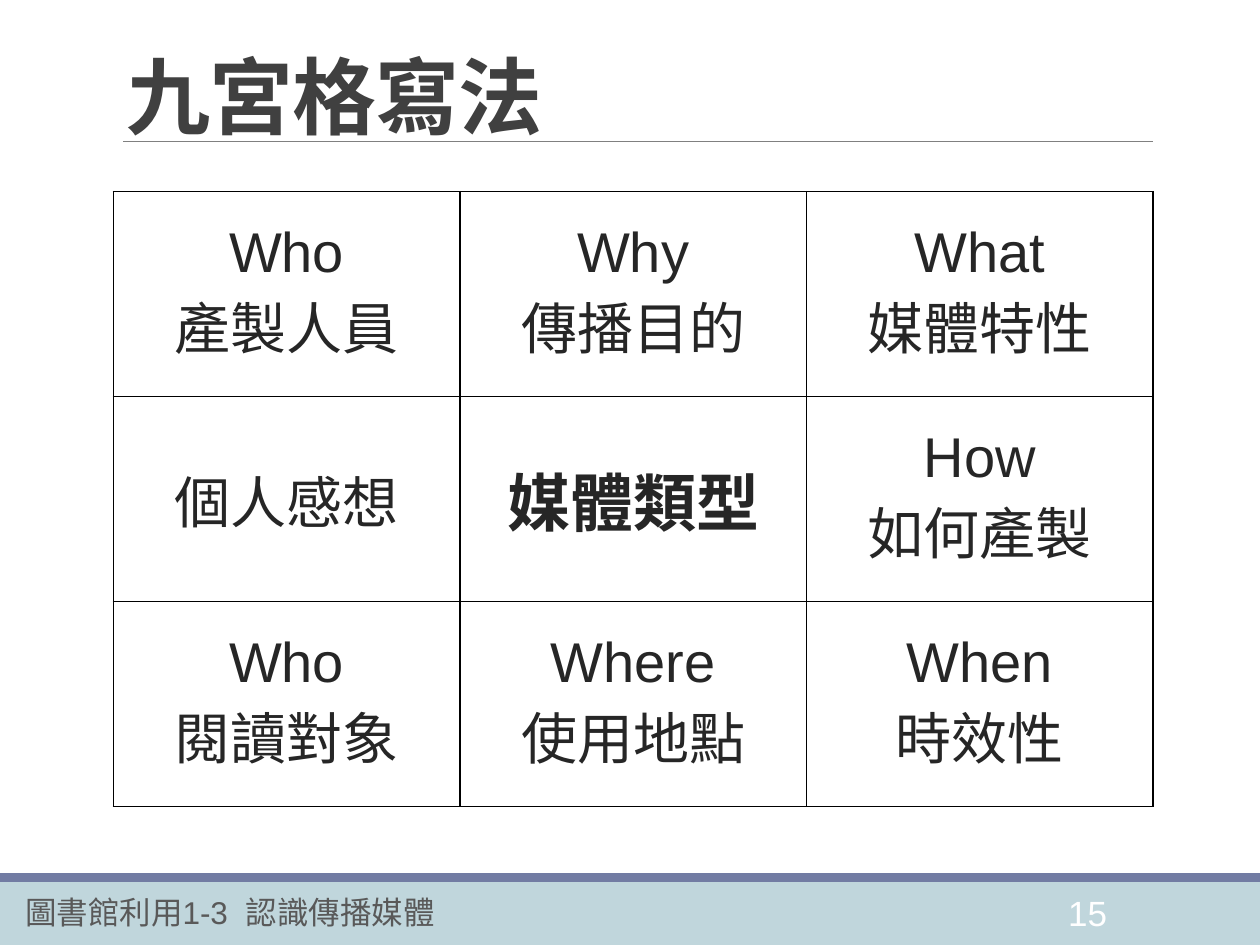
from dataclasses import dataclass

from lxml import etree
from pptx import Presentation
from pptx.dml.color import RGBColor
from pptx.enum import shapes, text
from pptx.oxml import ns
from pptx.util import Inches, Pt


@dataclass(frozen=True)
class Theme:
    latin: str = "Arial"
    cjk: str = "Noto Sans CJK SC"
    title_color: str = "404040"
    body_color: str = "262626"
    footer_color: str = "595959"
    white: str = "FFFFFF"
    black: str = "000000"
    band: str = "C0D6DC"
    stripe: str = "727CA3"
    rule: str = "808080"
    title_size: int = 48
    center_size: int = 36
    body_size: int = 32
    number_size: int = 20
    footer_size: int = 18


class SlideBuilder:
    def __init__(self, slide, theme):
        self.slide = slide
        self.theme = theme

    def style(self, paragraph, size, color, bold=False, latin=None):
        for run in paragraph.runs:
            font = run.font
            font.size = Pt(size)
            font.bold = bold
            font.name = latin or self.theme.latin
            font.color.rgb = RGBColor.from_string(color)
            properties = run._r.get_or_add_rPr()
            east_asian = etree.SubElement(properties, ns.qn("a:ea"))
            east_asian.set("typeface", self.theme.cjk)

    def bar(self, left, top, width, height, color):
        bar = self.slide.shapes.add_shape(
            shapes.MSO_SHAPE.RECTANGLE,
            Inches(left), Inches(top), Inches(width), Inches(height))
        bar.shadow.inherit = False
        bar.fill.solid()
        bar.fill.fore_color.rgb = RGBColor.from_string(color)
        bar.line.fill.background()

    def rule(self, left, right, y):
        rule = self.slide.shapes.add_connector(
            shapes.MSO_CONNECTOR.STRAIGHT,
            Inches(left), Inches(y), Inches(right), Inches(y))
        rule.line.color.rgb = RGBColor.from_string(self.theme.rule)
        rule.line.width = Pt(0.5)
        etree.SubElement(rule._element.spPr, ns.qn("a:effectLst"))

    def label(self, left, top, width, height, words, size, color):
        frame = self.slide.shapes.add_textbox(
            Inches(left), Inches(top), Inches(width), Inches(height)).text_frame
        frame.word_wrap = True
        frame.text = words
        self.style(frame.paragraphs[0], size, color)

    def title(self, left, top, width, height, words):
        title = self.slide.shapes.title
        title.left, title.top = Inches(left), Inches(top)
        title.width, title.height = Inches(width), Inches(height)
        frame = title.text_frame
        frame.auto_size = text.MSO_AUTO_SIZE.NONE
        frame.vertical_anchor = text.MSO_ANCHOR.BOTTOM
        frame.text = words
        heading = frame.paragraphs[0]
        heading.alignment = text.PP_ALIGN.LEFT
        heading.line_spacing = 0.85
        self.style(heading, self.theme.title_size, self.theme.title_color,
                   bold=True, latin=self.theme.cjk)
        heading.runs[0]._r.get_or_add_rPr().set("spc", "-50")

    def border(self, cell):
        properties = cell._tc.get_or_add_tcPr()
        for position, side in enumerate(("lnL", "lnR", "lnT", "lnB")):
            line = etree.Element(ns.qn(f"a:{side}"), w=str(Pt(1)))
            fill = etree.SubElement(line, ns.qn("a:solidFill"))
            etree.SubElement(fill, ns.qn("a:srgbClr"), val=self.theme.black)
            properties.insert(position, line)

    def grid(self, left, top, width, height, rows, center):
        table = self.slide.shapes.add_table(
            len(rows), len(rows[0]),
            Inches(left), Inches(top), Inches(width), Inches(height)).table
        table.first_row = False
        table.horz_banding = False
        for row, entries in enumerate(rows):
            for column, words in enumerate(entries):
                is_center = (row, column) == center
                cell = table.cell(row, column)
                cell.fill.solid()
                cell.fill.fore_color.rgb = RGBColor.from_string(self.theme.white)
                cell.vertical_anchor = text.MSO_ANCHOR.MIDDLE
                cell.text_frame.text = words
                for paragraph in cell.text_frame.paragraphs:
                    paragraph.alignment = text.PP_ALIGN.CENTER
                    size = self.theme.center_size if is_center else self.theme.body_size
                    self.style(paragraph, size, self.theme.body_color, bold=is_center)
                self.border(cell)


def main():
    theme = Theme()
    deck = Presentation()
    deck.slide_width, deck.slide_height = Inches(10), Inches(7.5)
    page = SlideBuilder(deck.slides.add_slide(deck.slide_layouts[5]), theme)

    page.bar(0, 7, 10, 0.5, theme.band)
    page.bar(0, 6.93, 10, 0.07, theme.stripe)
    page.rule(0.98, 9.15, 1.12)
    page.label(8.38, 7.03, 0.7, 0.4, "15", theme.number_size, theme.white)
    page.label(0.1, 7.04, 4.65, 0.4, "圖書館利用1-3  認識傳播媒體",
               theme.footer_size, theme.footer_color)
    page.title(0.9, 0.4, 8.25, 0.81, "九宮格寫法")

    questions = [
        ["Who\n產製人員", "Why\n傳播目的", "What\n媒體特性"],
        ["個人感想", "媒體類型", "How\n如何產製"],
        ["Who\n閱讀對象", "Where\n使用地點", "When\n時效性"],
    ]
    page.grid(0.9, 1.52, 8.25, 4.88, questions, center=(1, 1))
    deck.save("out.pptx")


if __name__ == "__main__":
    main()
